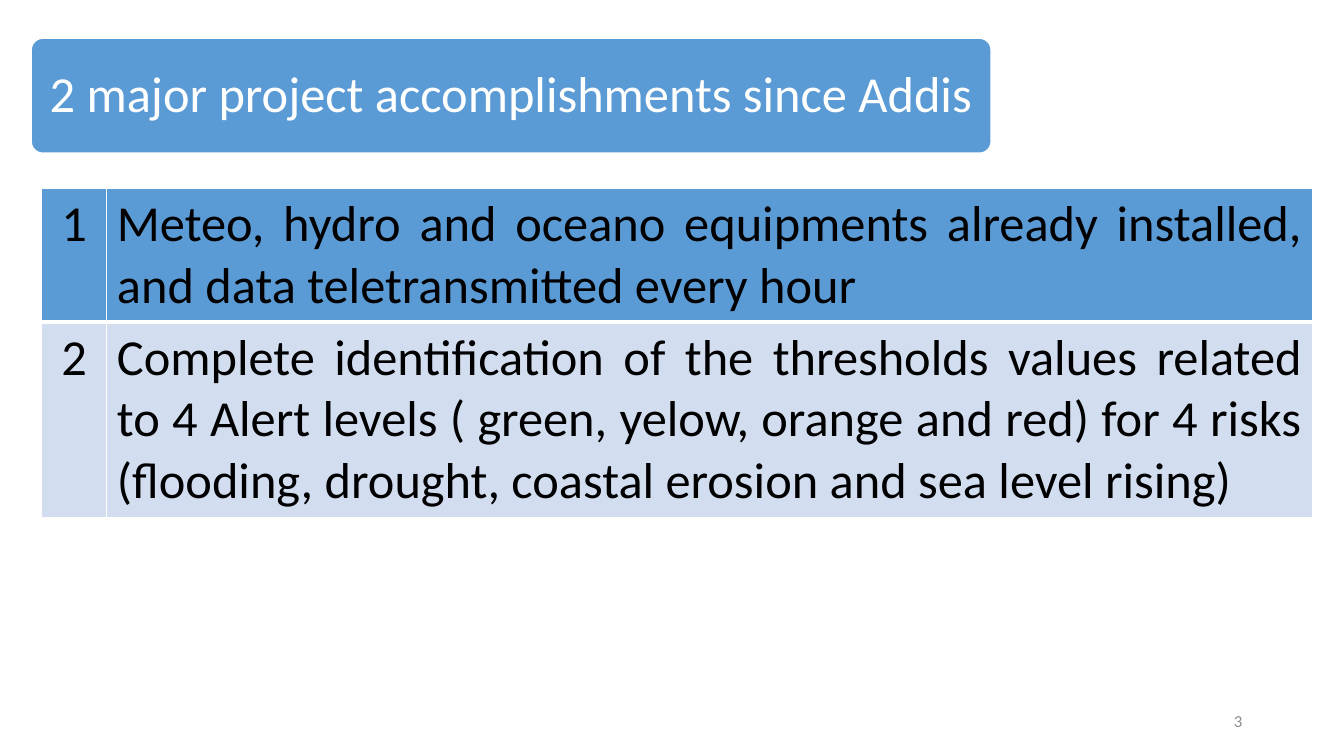
from lxml import etree
from pptx import Presentation
from pptx import util as u
from pptx.dml.color import RGBColor
from pptx.enum import shapes, text
from pptx.oxml import ns

BLUE, PALE, WHITE, BLACK, GREY = "5B9BD5", "D2DEEF", "FFFFFF", "000000", "8C8C8C"
ACCOMPLISHMENTS = [
    ("Meteo, hydro and oceano equipments already installed, "
     "and data teletransmitted every hour", BLUE, 1.32),
    ("Complete identification of the thresholds values related to 4 Alert levels "
     "( green, yelow, orange and red) for 4 risks "
     "(flooding, drought, coastal erosion and sea level rising)", PALE, 1.93),
]


def colour(value):
    return RGBColor.from_string(value)


def inches(*lengths):
    return [u.Inches(length) for length in lengths]


def write(frame, words, size, ink, align):
    frame.text = words
    para = frame.paragraphs[0]
    para.alignment = align
    para.font.size = u.Pt(size)
    para.font.name = "Calibri"
    para.font.color.rgb = colour(ink)
    return para


def add_title(page, words):
    banner = page.shapes.add_shape(
        shapes.MSO_SHAPE.ROUNDED_RECTANGLE, *inches(0.31, 0.38, 9.52, 1.14))
    banner.adjustments[0] = 0.1
    banner.shadow.inherit = False
    banner.fill.solid()
    banner.fill.fore_color.rgb = colour(BLUE)
    banner.line.color.rgb = colour(WHITE)
    banner.line.width = u.Pt(1)

    title = page.shapes.title
    title.left, title.top, title.width, title.height = inches(0.34, 0.42, 9.46, 1.07)
    banner.element.addnext(title.element)
    frame = title.text_frame
    frame.auto_size = text.MSO_AUTO_SIZE.NONE
    frame.vertical_anchor = text.MSO_ANCHOR.MIDDLE
    frame.margin_left = frame.margin_right = u.Inches(0.1)
    para = write(frame, words, 36, WHITE, text.PP_ALIGN.CENTER)
    para.line_spacing = 0.9


def add_border(cell, side, points):
    properties = cell._tc.get_or_add_tcPr()
    line = etree.SubElement(properties, ns.qn(f"a:ln{side}"), w=str(u.Pt(points)))
    fill = etree.SubElement(line, ns.qn("a:solidFill"))
    etree.SubElement(fill, ns.qn("a:srgbClr"), val=WHITE)


def fill_cell(cell, words, align, background, borders):
    write(cell.text_frame, words, 36, BLACK, align)
    for side, points in borders.items():
        add_border(cell, side, points)
    cell.fill.solid()
    cell.fill.fore_color.rgb = colour(background)


def add_accomplishments(page):
    height = sum(row[2] for row in ACCOMPLISHMENTS)
    table = page.shapes.add_table(
        len(ACCOMPLISHMENTS), 2, *inches(0.41, 1.87, 12.61, height)).table
    for column, width in zip(table.columns, inches(0.65, 11.96)):
        column.width = width
    for index, (words, background, row_height) in enumerate(ACCOMPLISHMENTS):
        table.rows[index].height = u.Inches(row_height)
        borders = {"L": 1, "R": 1, "T": 3 if index else 1, "B": 1 if index else 3}
        fill_cell(table.cell(index, 0), str(index + 1), text.PP_ALIGN.CENTER,
                  background, borders)
        fill_cell(table.cell(index, 1), words, text.PP_ALIGN.JUSTIFY,
                  background, borders)


def add_page_number(page, number):
    box = page.shapes.add_textbox(*inches(9.42, 6.95, 3, 0.4))
    frame = box.text_frame
    frame.word_wrap = True
    frame.vertical_anchor = text.MSO_ANCHOR.MIDDLE
    write(frame, number, 12, GREY, text.PP_ALIGN.RIGHT)


def main():
    deck = Presentation()
    deck.slide_width, deck.slide_height = inches(13.33, 7.5)
    page = deck.slides.add_slide(deck.slide_layouts[5])
    add_title(page, "2 major project accomplishments since Addis")
    add_accomplishments(page)
    add_page_number(page, "3")
    deck.save("out.pptx")


if __name__ == "__main__":
    main()
